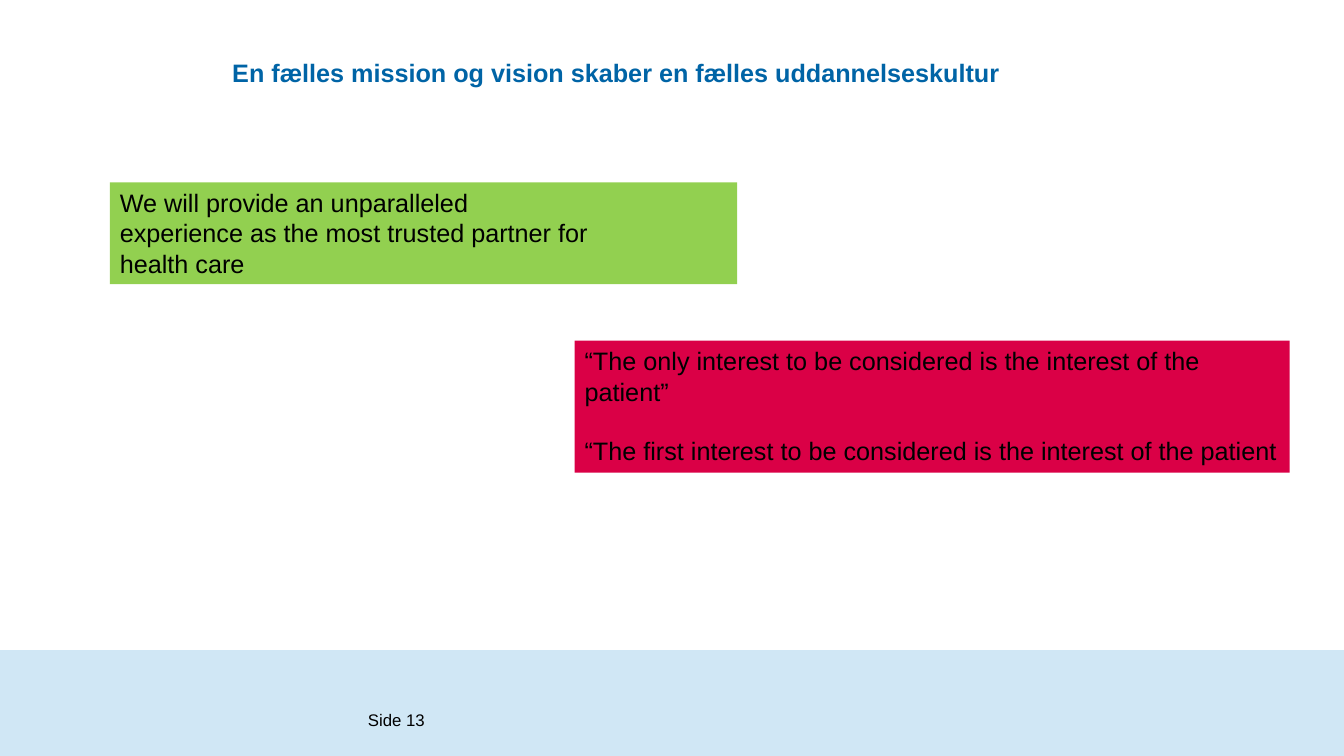
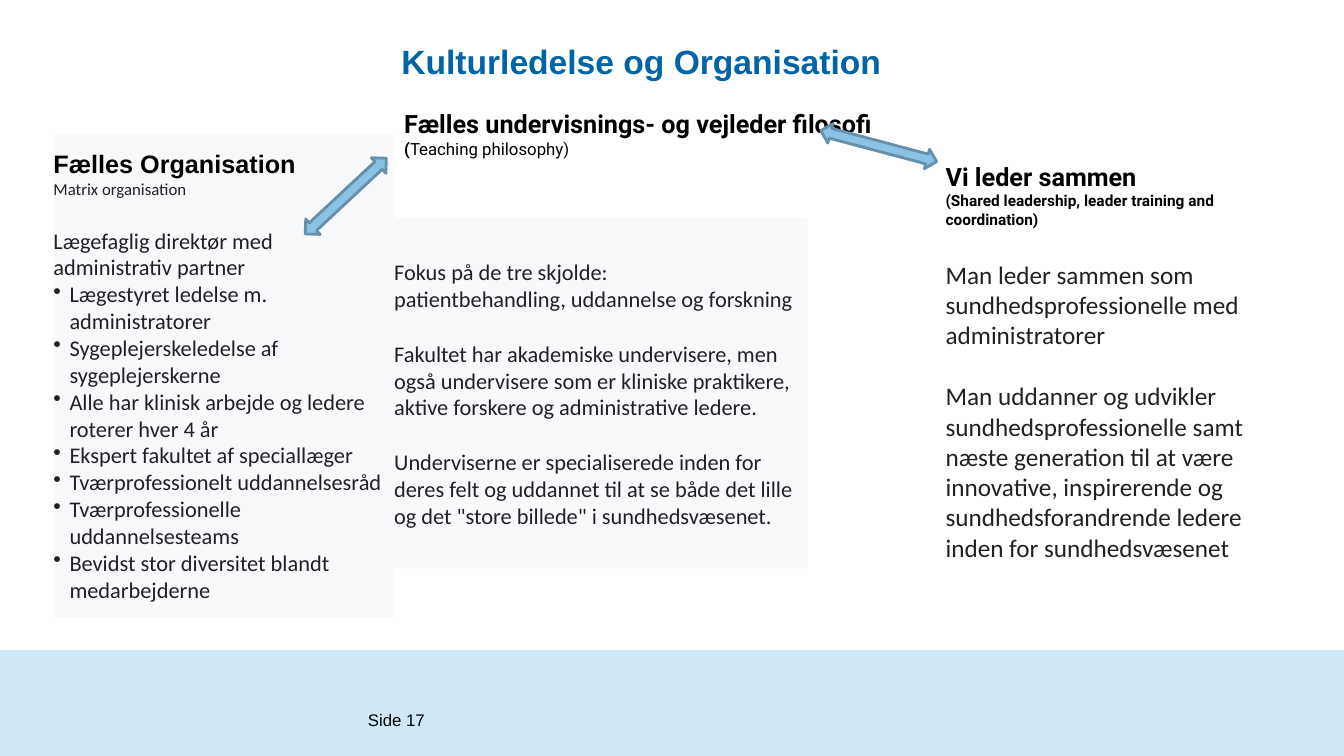
from lxml import etree
from pptx import Presentation
from pptx.dml.color import RGBColor
from pptx.enum.shapes import MSO_SHAPE
from pptx.enum.text import MSO_ANCHOR, PP_ALIGN
from pptx.oxml.ns import qn
from pptx.util import Inches, Pt

RECTANGLE, DOUBLE_ARROW = MSO_SHAPE.RECTANGLE, MSO_SHAPE.LEFT_RIGHT_ARROW
TOP, MIDDLE = MSO_ANCHOR.TOP, MSO_ANCHOR.MIDDLE
LEFT, CENTER = PP_ALIGN.LEFT, PP_ALIGN.CENTER

COLORS = {
    "band": "D0E7F5", "title": "0064A6", "text": "000000", "body": "202124",
    "green": "92D050", "red": "DA0046", "panel": "F8F9FA",
    "arrow": "8AC2E6", "arrow_line": "6690AA", "white": "FFFFFF",
}

# Text styles: font, size, bold, colour
STYLES = {
    "footer": ("Arial", 12, False, "text"),
    "title_small": ("Arial", 18, True, "title"),
    "title_large": ("Arial", 24, True, "title"),
    "statement": ("Arial", 18, False, "text"),
    "heading": ("Roboto", 18, True, "text"),
    "heading_arial": ("Arial", 18, True, "text"),
    "sub_bracket": ("Roboto", 12, True, "text"),
    "sub_light": ("Roboto", 12, False, "text"),
    "sub_bold": ("Roboto", 11, True, "text"),
    "sub_body": ("Calibri", 12, False, "body"),
    "body": ("Calibri", 16, False, "body"),
    "body_large": ("Calibri", 18, False, "body"),
}

BAND = (0, 6.45, 13.33, 1.05)
FOOTER = (3.55, 7.04, 1.89, 0.2)
TEXT_INSETS = (0.1, 0.05)
TITLE_INSETS = (0.28, 0.12)
NO_INSETS = (0, 0)
BULLET_INDENT = 0.16

# A paragraph is (runs, space before in points, bulleted); a run is (text, style).
ORGANISATION_BULLETS = [
    "Lægestyret ledelse m. administratorer",
    "Sygeplejerskeledelse af sygeplejerskerne",
    "Alle har klinisk arbejde og ledere roterer hver 4 år",
    "Ekspert fakultet af speciallæger",
    "Tværprofessionelt uddannelsesråd",
    "Tværprofessionelle uddannelsesteams",
    "Bevidst stor diversitet blandt medarbejderne",
]


def line(text, style, before=0, bullet=False):
    return [(text, style)], before, bullet


SLIDES = [
    {
        "page": 13,
        "title": ("En fælles mission og vision skaber en fælles uddannelseskultur",
                  "title_small", (0.34, 0.45, 11.54, 0.54)),
        "boxes": [
            {"at": (1.09, 1.81, 6.22, 1.01), "fill": "green", "paragraphs": [
                line("We will provide an unparalleled\v"
                     "experience as the most trusted partner for\vhealth care",
                     "statement"),
            ]},
            {"at": (5.7, 3.38, 7.09, 1.31), "fill": "red", "paragraphs": [
                line("“The only interest to be considered is the interest "
                     "of the patient”", "statement"),
                line("“The first interest to be considered is the interest "
                     "of the patient", "statement", 21),
            ]},
        ],
        "arrows": [],
    },
    {
        "page": 17,
        "title": ("Kulturledelse og Organisation", "title_large",
                  (0.75, 0.29, 11.22, 0.64)),
        "boxes": [
            {"at": (3.91, 1.03, 4.94, 0.71), "paragraphs": [
                ([("Fælles undervisnings- og vejleder filosofi ", "heading"),
                  ("(", "sub_bracket"),
                  ("Teaching philosophy)", "sub_light")], 0, False),
            ]},
            {"at": (9.28, 1.55, 3.65, 4.71), "paragraphs": [
                line("Vi leder sammen", "heading"),
                line("(Shared leadership, leader training and coordination)",
                     "sub_bold"),
                line("Man leder sammen som sundhedsprofessionelle med "
                     "administratorer", "body_large", 22),
                line("Man uddanner og udvikler sundhedsprofessionelle samt næste "
                     "generation til at være innovative, inspirerende og "
                     "sundhedsforandrende ledere inden for sundhedsvæsenet",
                     "body_large", 22),
            ]},
            {"at": (0.53, 1.33, 3.38, 4.79), "fill": "panel",
             "anchor": MIDDLE, "insets": NO_INSETS, "paragraphs": [
                line("Fælles Organisation", "heading_arial"),
                line("Matrix organisation", "sub_body"),
                line("Lægefaglig direktør med administrativ partner", "body", 20),
                *[line(text, "body", bullet=True) for text in ORGANISATION_BULLETS],
             ]},
            {"at": (3.91, 2.17, 4.1, 3.47), "fill": "panel",
             "anchor": MIDDLE, "insets": NO_INSETS, "paragraphs": [
                line("Fokus på de tre skjolde:\v"
                     "patientbehandling, uddannelse og forskning", "body"),
                line("Fakultet har akademiske undervisere, men også undervisere "
                     "som er kliniske praktikere, aktive forskere og "
                     "administrative ledere.", "body", 20),
                line("Underviserne er specialiserede inden for deres felt og "
                     "uddannet til at se både det lille og det \"store billede\" "
                     "i sundhedsvæsenet.", "body", 20),
             ]},
        ],
        # Place and rotation in degrees
        "arrows": [((2.88, 1.84, 1.1, 0.21), 317), ((8.12, 1.35, 1.19, 0.2), 14.9)],
    },
]


def rgb(name):
    return RGBColor.from_string(COLORS[name])


def add_filled_shape(slide, kind, at, fill):
    shape = slide.shapes.add_shape(kind, *map(Inches, at))
    shape.shadow.inherit = False
    shape.fill.solid()
    shape.fill.fore_color.rgb = rgb(fill)
    shape.line.fill.background()
    return shape


def add_bullet(paragraph):
    properties = paragraph._p.get_or_add_pPr()
    properties.set("marL", str(Inches(BULLET_INDENT)))
    properties.set("indent", str(-Inches(BULLET_INDENT)))
    etree.SubElement(properties, qn("a:buChar")).set("char", "•")


def write_paragraph(paragraph, runs, before, bullet, align):
    paragraph.alignment = align
    if before:
        paragraph.space_before = Pt(before)
    if bullet:
        add_bullet(paragraph)
    for text, style in runs:
        first_new = len(paragraph.runs)
        for index, part in enumerate(text.split("\v")):
            if index:
                paragraph.add_line_break()
            paragraph.add_run().text = part
        name, size, bold, color = STYLES[style]
        for run in paragraph.runs[first_new:]:
            run.font.name, run.font.size, run.font.bold = name, Pt(size), bold
            run.font.color.rgb = rgb(color)


def add_text(slide, at, paragraphs, fill=None, anchor=TOP, insets=TEXT_INSETS,
             align=LEFT):
    """Add a text box, or a filled rectangle with text when a fill is given."""
    if fill:
        shape = add_filled_shape(slide, RECTANGLE, at, fill)
    else:
        shape = slide.shapes.add_textbox(*map(Inches, at))
    frame = shape.text_frame
    frame.word_wrap = True
    frame.vertical_anchor = anchor
    frame.margin_left = frame.margin_right = Inches(insets[0])
    frame.margin_top = frame.margin_bottom = Inches(insets[1])
    for index, (runs, before, bullet) in enumerate(paragraphs):
        paragraph = frame.add_paragraph() if index else frame.paragraphs[0]
        write_paragraph(paragraph, runs, before, bullet, align)


def add_arrow(slide, at, rotation):
    arrow = add_filled_shape(slide, DOUBLE_ARROW, at, "arrow")
    arrow.line.color.rgb = rgb("arrow_line")
    arrow.line.width = Pt(2)
    arrow.rotation = rotation


def add_frame(slide, page, title):
    """Add what every slide shares: bottom band, page number and title."""
    add_filled_shape(slide, RECTANGLE, BAND, "band")
    add_text(slide, FOOTER, [line(f"Side {page}", "footer")],
             anchor=MIDDLE, insets=(0.1, 0))
    text, style, at = title
    add_text(slide, at, [line(text, style)], fill="white", anchor=MIDDLE,
             insets=TITLE_INSETS, align=CENTER)


def main():
    presentation = Presentation()
    presentation.slide_width = Inches(13.33)
    presentation.slide_height = Inches(7.5)
    for content in SLIDES:
        slide = presentation.slides.add_slide(presentation.slide_layouts[6])
        add_frame(slide, content["page"], content["title"])
        for box in content["boxes"]:
            add_text(slide, **box)
        for at, rotation in content["arrows"]:
            add_arrow(slide, at, rotation)
    presentation.save("out.pptx")


if __name__ == "__main__":
    main()
